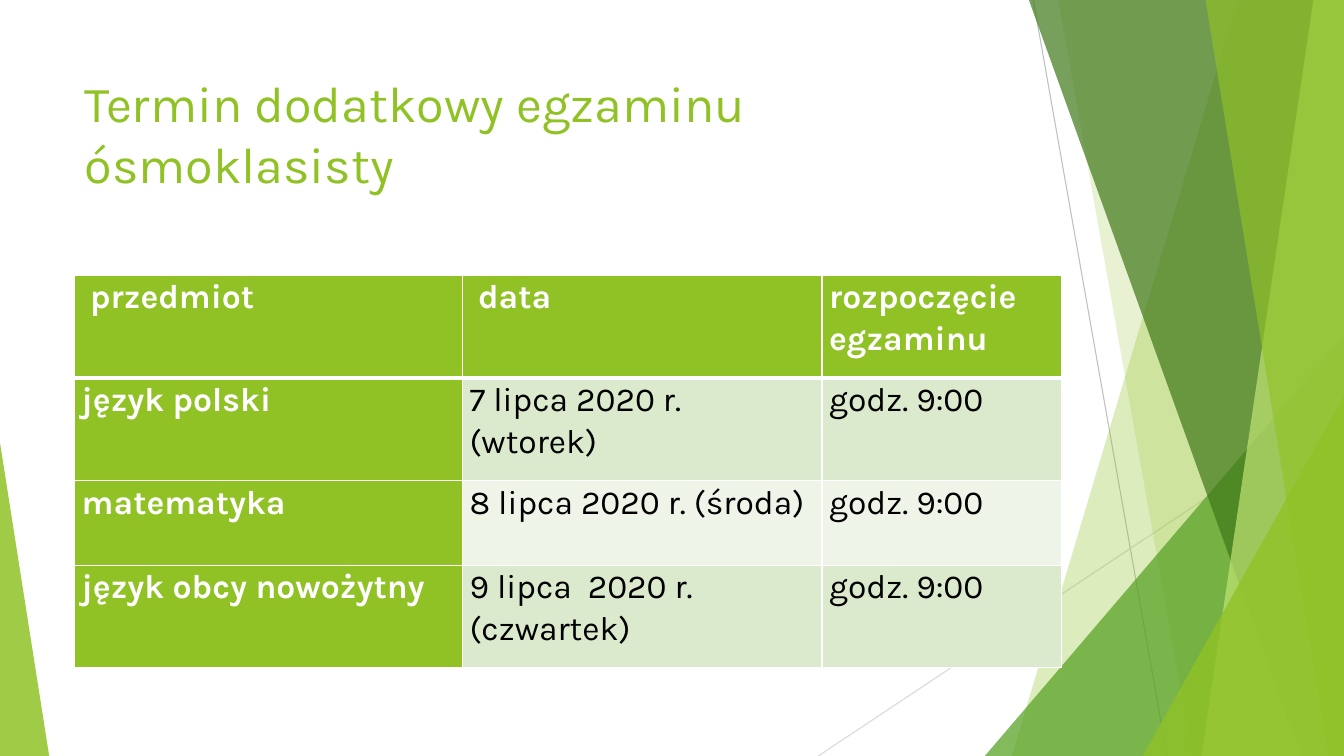
from lxml import etree
from pptx import Presentation
from pptx.dml.color import RGBColor
from pptx.enum.shapes import MSO_CONNECTOR, MSO_SHAPE
from pptx.enum.text import MSO_ANCHOR, PP_ALIGN
from pptx.oxml.ns import qn
from pptx.util import Cm, Pt

STRAIGHT = MSO_CONNECTOR.STRAIGHT
TRIANGLE = MSO_SHAPE.ISOSCELES_TRIANGLE
TOP, LEFT = MSO_ANCHOR.TOP, PP_ALIGN.LEFT

WIDTH, HEIGHT = 33.87, 19.05
FONT = "Karla"
COLORS = {
    "green": "90C226", "leaf": "54A021", "forest": "3F7819", "lime": "C0E474",
    "band": "DBE9CD", "pale band": "EEF4E8", "white": "FFFFFF", "black": "000000",
    "gray": "BFBFBF", "light gray": "D9D9D9",
}
EXAMS = [
    ["\N{NO-BREAK SPACE}przedmiot", "\N{NO-BREAK SPACE}data", "rozpoczęcie egzaminu"],
    ["język polski", "7 lipca 2020 r. (wtorek)", "godz. 9:00"],
    ["matematyka", "8 lipca 2020 r. (środa)", "godz. 9:00"],
    ["język obcy nowożytny", "9 lipca  2020 r. (czwartek)", "godz. 9:00"],
]
COLUMN_SHARES = [3.85, 3.57, 2.38]
ROW_HEIGHTS = [2.59, 2.59, 2.13, 2.59]


def rgb(name):
    return RGBColor.from_string(COLORS[name])


def format_text(paragraph, size, color, bold=False):
    for run in paragraph.runs:
        run.font.name = FONT
        run.font.size = Pt(size)
        run.font.bold = bold
        run.font.color.rgb = rgb(color)


def paint(shape, color, opacity):
    """Give a shape a see-through fill, opacity in percent, and no outline."""
    shape.shadow.inherit = False
    shape.fill.solid()
    shape.fill.fore_color.rgb = rgb(color)
    shape.line.fill.background()
    color_element = shape.fill._xPr.find(qn("a:solidFill"))[0]
    etree.SubElement(color_element, qn("a:alpha")).set("val", str(opacity * 1000))


def add_thin_line(slide, start, end, color):
    line = slide.shapes.add_connector(STRAIGHT, *map(Cm, start + end))
    line.line.color.rgb = rgb(color)
    line.line.width = Pt(0.75)
    etree.SubElement(line._element.spPr, qn("a:effectLst"))


def add_blade(slide, top_left, bottom_left, color, opacity):
    """Fill the slide from a slanted left edge to its right side."""
    builder = slide.shapes.build_freeform(Cm(top_left), 0)
    builder.add_line_segments([
        (Cm(WIDTH), 0), (Cm(WIDTH), Cm(HEIGHT)), (Cm(bottom_left), Cm(HEIGHT)),
    ], close=True)
    paint(builder.convert_to_shape(), color, opacity)


def add_corner(slide, left, top, width, apex, color, opacity):
    """Add a triangle standing on the bottom edge of the slide."""
    triangle = slide.shapes.add_shape(
        TRIANGLE, Cm(left), Cm(top), Cm(width), Cm(HEIGHT - top))
    triangle.adjustments[0] = apex
    paint(triangle, color, opacity)


def add_decoration(slide):
    add_thin_line(slide, (26.04, 0), (29.41, HEIGHT), "gray")
    add_thin_line(slide, (WIDTH, 10.24), (20.62, HEIGHT), "light gray")
    add_blade(slide, 31.19, 25.5, "green", 30)
    add_blade(slide, 26.67, 30.05, "green", 20)
    add_corner(slide, 24.82, 8.46, WIDTH - 24.82, 1, "leaf", 72)
    add_blade(slide, 25.93, 32.79, "forest", 70)
    add_blade(slide, 33.1, 30.28, "lime", 70)
    add_blade(slide, 30.38, 33.48, "green", 65)
    add_corner(slide, 28.8, 9.98, WIDTH - 28.8, 1, "green", 80)
    add_corner(slide, 0, 11.15, 1.24, 0, "green", 85)


def place_title(slide, text, left, top, width, height):
    title = slide.shapes.title
    title.left, title.top, title.width, title.height = map(Cm, (left, top, width, height))
    frame = title.text_frame
    frame.text = text
    frame.word_wrap = True
    frame.vertical_anchor = TOP
    frame.paragraphs[0].alignment = LEFT
    format_text(frame.paragraphs[0], 36, "green")


def add_borders(cell, row):
    """Draw white cell borders, thicker between the header and the body."""
    properties = cell._tc.get_or_add_tcPr()
    thick = {0: "lnB", 1: "lnT"}.get(row)
    for side in ("lnL", "lnR", "lnT", "lnB"):
        width = Pt(3 if side == thick else 1)
        border = etree.SubElement(properties, qn("a:" + side), w=str(width))
        fill = etree.SubElement(border, qn("a:solidFill"))
        etree.SubElement(fill, qn("a:srgbClr"), val=COLORS["white"])


def format_cell(cell, row, column):
    heading = row == 0 or column == 0
    add_borders(cell, row)
    cell.fill.solid()
    band = "band" if row % 2 else "pale band"
    cell.fill.fore_color.rgb = rgb("green" if heading else band)
    cell.margin_left = cell.margin_right = Cm(0.18)
    cell.margin_top = cell.margin_bottom = 0
    paragraph = cell.text_frame.paragraphs[0]
    paragraph.line_spacing = 1.07
    format_text(paragraph, 24, "white" if heading else "black", heading)


def add_exam_table(slide, left, top, width):
    table = slide.shapes.add_table(
        len(EXAMS), len(COLUMN_SHARES),
        Cm(left), Cm(top), Cm(width), Cm(sum(ROW_HEIGHTS))).table
    for column, share in zip(table.columns, COLUMN_SHARES):
        column.width = Cm(width * share / sum(COLUMN_SHARES))
    for row_index, (texts, height) in enumerate(zip(EXAMS, ROW_HEIGHTS)):
        table.rows[row_index].height = Cm(height)
        for column_index, text in enumerate(texts):
            cell = table.cell(row_index, column_index)
            cell.text = text
            format_cell(cell, row_index, column_index)


def main():
    presentation = Presentation()
    presentation.slide_width = Cm(WIDTH)
    presentation.slide_height = Cm(HEIGHT)
    slide = presentation.slides.add_slide(presentation.slide_layouts[5])
    add_decoration(slide)
    place_title(slide, "Termin dodatkowy egzaminu ósmoklasisty", 1.88, 1.7, 23.88, 3.66)
    add_exam_table(slide, 1.88, 6.93, 24.88)
    presentation.save("out.pptx")


if __name__ == "__main__":
    main()
